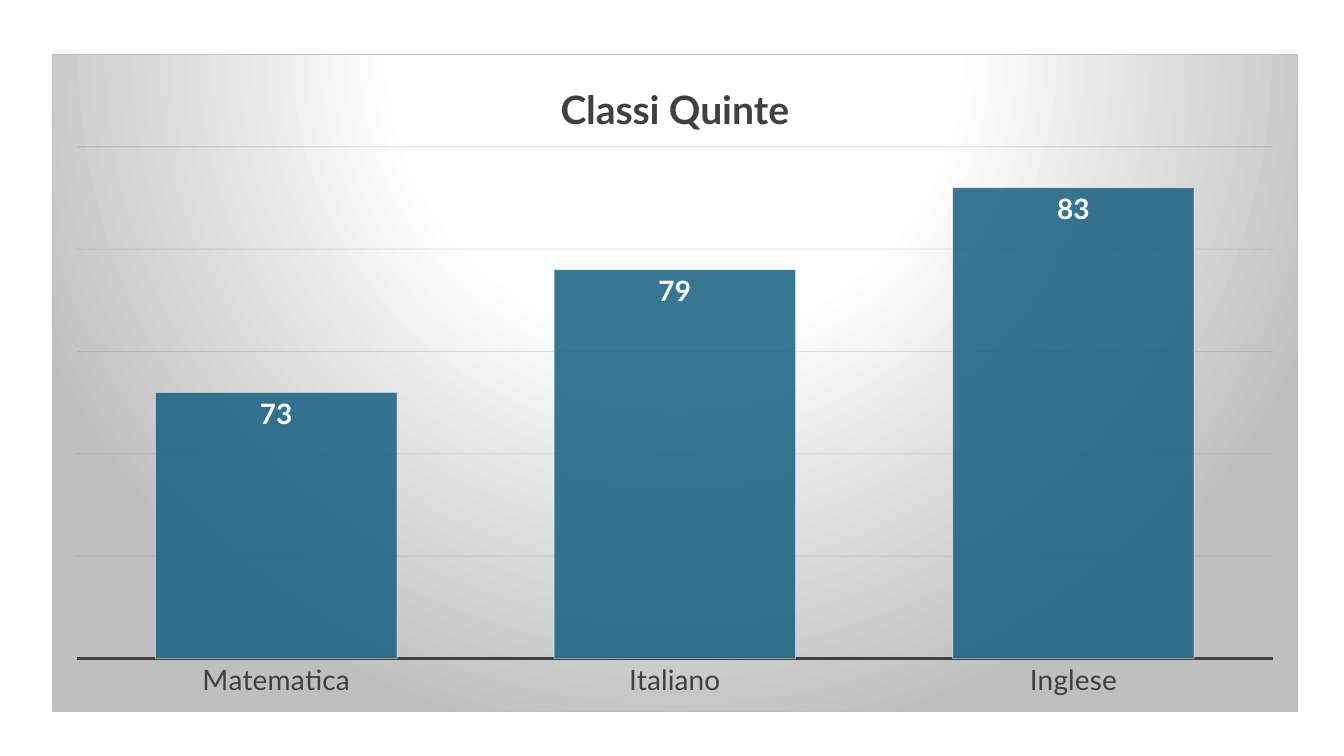
import pptx
import pptx.chart.data
import pptx.dml.color
import pptx.enum.chart
import pptx.oxml
import pptx.util
from pptx.oxml.ns import nsdecls

Pt = pptx.util.Pt

SCORES = {"Matematica": 73, "Italiano": 79, "Inglese": 83}

BACKGROUND = f"""
<c:spPr {nsdecls("c", "a")}>
  <a:gradFill rotWithShape="1">
    <a:gsLst>
      <a:gs pos="0"><a:srgbClr val="FFFFFF"/></a:gs>
      <a:gs pos="39000"><a:srgbClr val="FFFFFF"/></a:gs>
      <a:gs pos="100000"><a:srgbClr val="BFBFBF"/></a:gs>
    </a:gsLst>
    <a:path path="circle">
      <a:fillToRect l="50000" t="-80000" r="50000" b="180000"/>
    </a:path>
  </a:gradFill>
  <a:ln w="9525"><a:solidFill><a:srgbClr val="BFBFBF"/></a:solidFill></a:ln>
</c:spPr>"""

PLOT_LAYOUT = f"""
<c:layout {nsdecls("c")}>
  <c:manualLayout>
    <c:layoutTarget val="inner"/><c:xMode val="edge"/><c:yMode val="edge"/>
    <c:x val="0.02"/><c:y val="0.14"/><c:w val="0.96"/><c:h val="0.78"/>
  </c:manualLayout>
</c:layout>"""


def rgb(color):
    return pptx.dml.color.RGBColor.from_string(color)


def set_values(target, values):
    for name, value in values.items():
        setattr(target, name, value)


def set_opacity(solid_fill, percent):
    alpha = f'<a:alpha {nsdecls("a")} val="{percent * 1000}"/>'
    solid_fill[0].append(pptx.oxml.parse_xml(alpha))


class ChartSlide:
    font_name = "Lato"
    dark = "404040"

    def __init__(self, presentation):
        self.slide = presentation.slides.add_slide(presentation.slide_layouts[6])

    def style_font(self, font, size, color, bold=False):
        set_values(font, {"name": self.font_name, "size": Pt(size), "bold": bold})
        font.color.rgb = rgb(color)

    def style_line(self, line, color, width):
        line.color.rgb = rgb(color)
        line.width = Pt(width)

    def add_columns(self, scores, left, top, width, height):
        data = pptx.chart.data.CategoryChartData(number_format="0")
        data.categories = list(scores)
        data.add_series("Series 1", list(scores.values()))
        chart = self.slide.shapes.add_chart(
            pptx.enum.chart.XL_CHART_TYPE.COLUMN_CLUSTERED,
            Pt(left), Pt(top), Pt(width), Pt(height), data).chart
        chart.has_legend = False
        self.style_font(chart.font, 10, "000000")
        self.style_background(chart)
        self.style_axes(chart)
        self.style_series(chart.plots[0])
        return chart

    def style_background(self, chart):
        chart_xml = chart.element.find("{*}chart")
        chart_xml.addnext(pptx.oxml.parse_xml(BACKGROUND))
        plot_area = chart_xml.find("{*}plotArea")
        for layout in plot_area.findall("{*}layout"):
            plot_area.remove(layout)
        plot_area.insert(0, pptx.oxml.parse_xml(PLOT_LAYOUT))

    def style_axes(self, chart):
        no_tick = pptx.enum.chart.XL_TICK_MARK.NONE
        subjects, points = chart.category_axis, chart.value_axis
        set_values(subjects, {"major_tick_mark": no_tick, "minor_tick_mark": no_tick})
        self.style_font(subjects.tick_labels.font, 20, self.dark)
        self.style_line(subjects.format.line, self.dark, 1.5)
        set_values(points, {"minimum_scale": 60, "maximum_scale": 85, "major_unit": 5,
                            "visible": False, "has_major_gridlines": True})
        self.style_line(points.major_gridlines.format.line, "0D0D0D", 0.75)
        gridline_fill = chart.element.xpath(".//c:majorGridlines//a:ln/a:solidFill")[0]
        set_opacity(gridline_fill, 10)

    def style_series(self, plot):
        set_values(plot, {"gap_width": 65, "vary_by_categories": False})
        series = plot.series[0]
        series.format.fill.solid()
        series.format.fill.fore_color.rgb = rgb("156082")
        self.style_line(series.format.line, "FFFFFF", 0.75)
        shape_format = series.format.fill, series.format.line
        element = plot.chart.element if hasattr(plot, "chart") else series._element
        for query, percent in (("a:solidFill", 85), ("a:ln/a:solidFill", 50)):
            set_opacity(element.xpath(f".//c:ser/c:spPr/{query}|./c:spPr/{query}")[0], percent)
        labels = series.data_labels
        set_values(labels, {
            "show_value": True, "number_format": "0", "number_format_is_linked": False,
            "position": pptx.enum.chart.XL_LABEL_POSITION.INSIDE_END})
        self.style_font(labels.font, 20, "FFFFFF", bold=True)

    def add_chart_title(self, chart, text):
        title = chart.chart_title
        title.include_in_layout = False
        title.text_frame.text = text
        run = title.text_frame.paragraphs[0].runs[0]
        self.style_font(run.font, 28, self.dark, bold=True)


def main():
    presentation = pptx.Presentation()
    set_values(presentation, {"slide_width": Pt(960), "slide_height": Pt(540)})
    page = ChartSlide(presentation)
    chart = page.add_columns(SCORES, 36.8, 38.9, 890.6, 469.4)
    page.add_chart_title(chart, "Classi Quinte")
    presentation.save("out.pptx")


if __name__ == "__main__":
    main()
